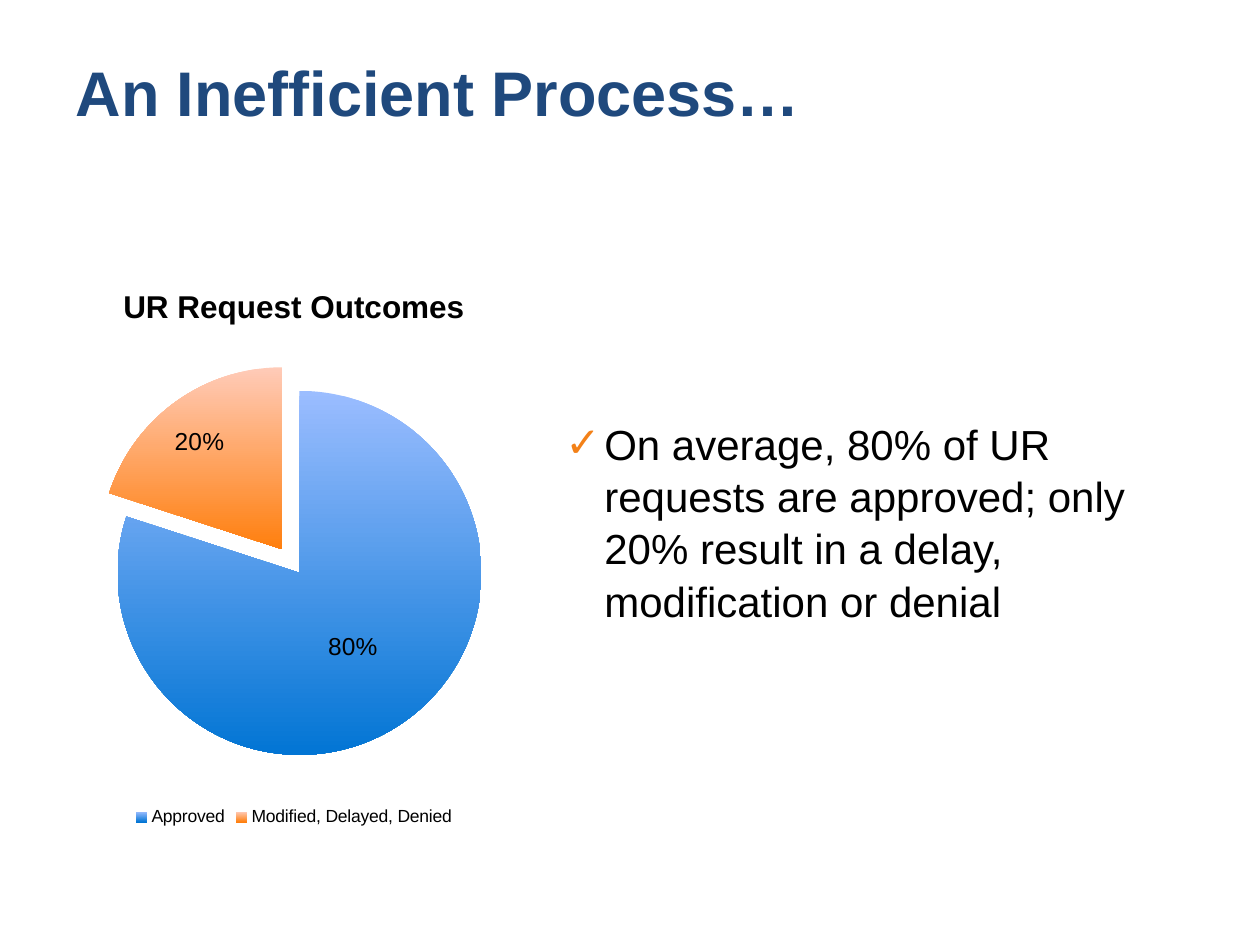
from lxml import etree
from pptx import Presentation
from pptx.chart.data import CategoryChartData
from pptx.dml.color import RGBColor
from pptx.enum.chart import XL_CHART_TYPE as ChartType
from pptx.enum.chart import XL_LABEL_POSITION as LabelPosition
from pptx.enum.chart import XL_LEGEND_POSITION as LegendPosition
from pptx.enum.text import MSO_ANCHOR as Anchor
from pptx.enum.text import PP_ALIGN as Align
from pptx.oxml import parse_xml
from pptx.oxml.ns import nsdecls, qn
from pptx.util import Pt

PX = 914400 // 126
FONT = "Arial"
NAVY = RGBColor(0x1F, 0x49, 0x7D)
BLACK = RGBColor(0, 0, 0)
CHECK = RGBColor(0xF3, 0x81, 0x18)
SLICES = [
    (RGBColor(0x9B, 0xBD, 0xFF), RGBColor(0x02, 0x75, 0xD4)),
    (RGBColor(0xFF, 0xCB, 0xB8), RGBColor(0xFF, 0x7F, 0x0E)),
]


def emu(box):
    return [length * PX for length in box]


def style(font, size, color=BLACK, bold=False):
    font.name = FONT
    font.size = Pt(size)
    font.bold = bold
    font.color.rgb = color


def add_title(page, box):
    title = page.shapes.title
    title.left, title.top, title.width, title.height = emu(box)
    frame = title.text_frame
    frame.text = "An Inefficient Process…"
    frame.vertical_anchor = Anchor.MIDDLE
    para = frame.paragraphs[0]
    para.alignment = Align.LEFT
    style(para.runs[0].font, 36, NAVY, True)


def add_finding(page, box):
    frame = page.shapes.add_textbox(*emu(box)).text_frame
    frame.word_wrap = True
    para = frame.paragraphs[0]
    para.text = ("On average, 80% of UR requests are approved; only 20% "
                 "result in a delay, modification or denial")
    para.line_spacing = 1.04
    props = para._p.get_or_add_pPr()
    indent = 39 * PX
    props.set("marL", str(indent))
    props.set("indent", str(-indent))
    color = etree.SubElement(props, qn("a:buClr"))
    etree.SubElement(color, qn("a:srgbClr"), val=str(CHECK))
    etree.SubElement(props, qn("a:buFont"), typeface=FONT)
    etree.SubElement(props, qn("a:buChar"), char="✓")
    style(para.runs[0].font, 24)


def layout_xml(**values):
    parts = "".join(f'<c:{key} val="{value}"/>' for key, value in values.items())
    return parse_xml(f'<c:layout {nsdecls("c")}><c:manualLayout>{parts}'
                     '</c:manualLayout></c:layout>')


def place_plot(chart, box, plot_box):
    area = chart._chartSpace.chart.plotArea
    for old in area.findall(qn("c:layout")):
        area.remove(old)
    left, top, width, height = plot_box
    area.insert(0, layout_xml(
        layoutTarget="inner", xMode="edge", yMode="edge",
        x=round(left / box[2], 2), y=round(top / box[3], 2),
        w=round(width / box[2], 2), h=round(height / box[3], 2)))


def add_outcomes(page, box):
    data = CategoryChartData(number_format="0%")
    data.categories = ["Approved", "Modified, Delayed, Denied"]
    data.add_series("Series 1", [0.8, 0.2])
    chart = page.shapes.add_chart(ChartType.PIE, *emu(box), data).chart
    style(chart.font, 10)

    chart.has_title = True
    heading = chart.chart_title.text_frame
    heading.text = "UR Request Outcomes"
    style(heading.paragraphs[0].runs[0].font, 18, BLACK, True)

    chart.has_legend = True
    chart.legend.position = LegendPosition.BOTTOM
    chart.legend.include_in_layout = False
    style(chart.legend.font, 10)

    plot = chart.plots[0]
    plot.vary_by_categories = True
    series = plot.series[0]
    for index, (light, dark) in enumerate(SLICES):
        fill = series.points[index].format.fill
        fill.gradient()
        fill.gradient_angle = 270
        for stop, color in zip(fill.gradient_stops, (light, dark)):
            stop.color.rgb = color
    explosion = parse_xml(f'<c:explosion {nsdecls("c")} val="8"/>')
    series._element.find(qn("c:dPt")).addprevious(explosion)

    labels = series.data_labels
    labels.show_value = True
    labels.number_format = "0%"
    labels.number_format_is_linked = False
    labels.position = LabelPosition.CENTER
    style(labels.font, 14)
    small_label = series.points[1].data_label
    style(small_label.font, 14)
    small_label.position = LabelPosition.CENTER
    index_node = labels._element.find(qn("c:dLbl")).find(qn("c:idx"))
    index_node.addnext(layout_xml(x=-0.05, y=-0.06))

    place_plot(chart, box, (97, 104, 394, 394))


def main():
    deck = Presentation()
    deck.slide_width, deck.slide_height = emu((1260, 945))
    page = deck.slides.add_slide(deck.slide_layouts[5])
    add_title(page, (63, 33, 1134, 116))
    add_finding(page, (553, 410, 644, 276))
    add_outcomes(page, (0, 262, 588, 570))
    deck.save("out.pptx")


if __name__ == "__main__":
    main()
